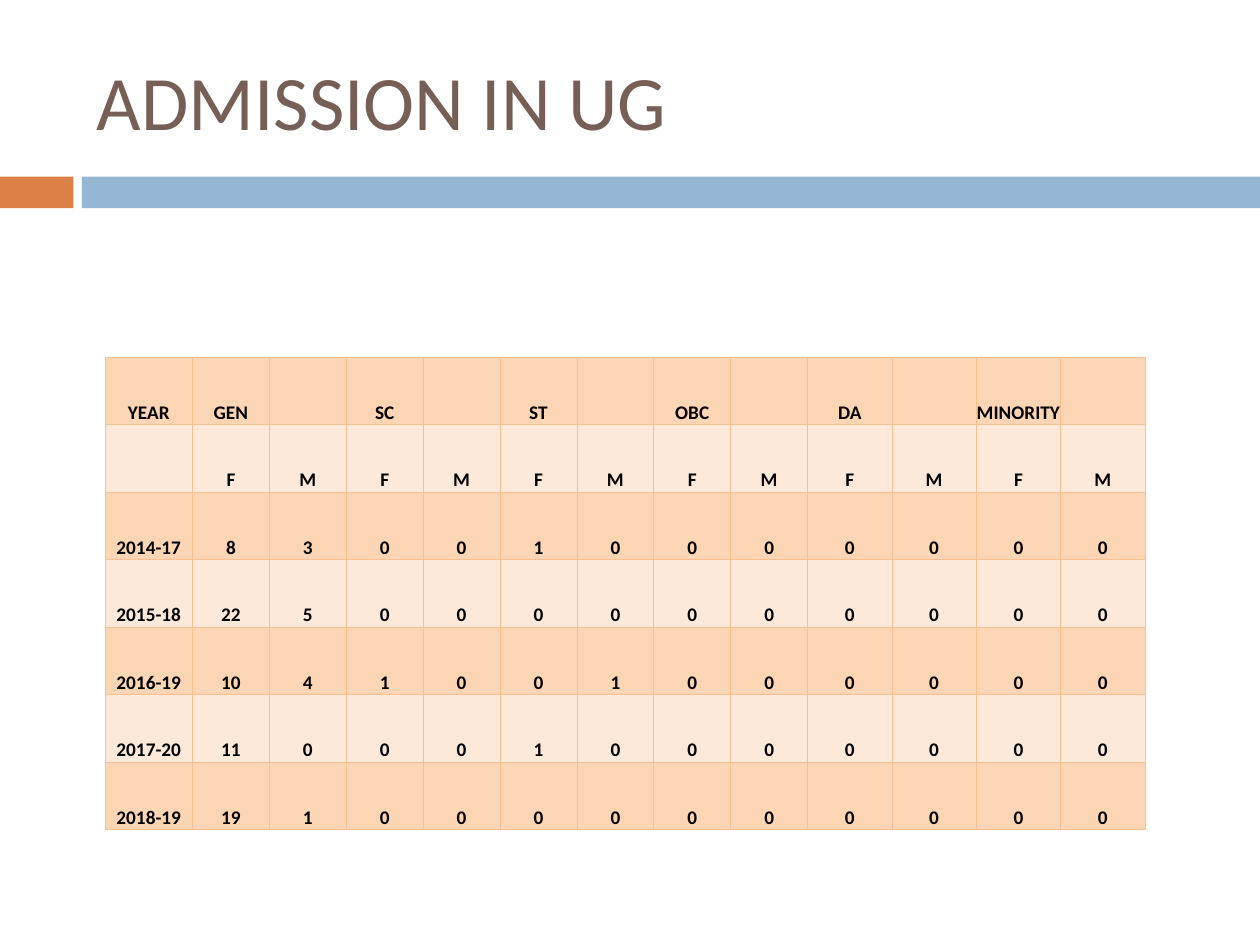
from lxml.etree import SubElement
from pptx import Presentation
from pptx.dml.color import RGBColor
from pptx.enum.shapes import MSO_SHAPE
from pptx.enum.text import MSO_ANCHOR, PP_ALIGN
from pptx.oxml.ns import qn
from pptx.util import Cm, Pt

ORANGE = RGBColor(0xDD, 0x80, 0x47)
BLUE = RGBColor(0x94, 0xB6, 0xD2)
BROWN = RGBColor(0x77, 0x5F, 0x55)
BLACK = RGBColor(0, 0, 0)
PEACH = RGBColor(0xFC, 0xD5, 0xB4)
CREAM = RGBColor(0xFD, 0xE9, 0xD9)
BORDER = RGBColor(0xFA, 0xC0, 0x90)


def add_run(p, text, size, color, bold=False):
    r = p.add_run()
    r.text = text
    r.font.name = "Calibri"
    r.font.size = Pt(size)
    r.font.bold = bold
    r.font.color.rgb = color


def add_borders(cell):
    tcPr = cell._tc.get_or_add_tcPr()
    for side in ("a:lnL", "a:lnR", "a:lnT", "a:lnB"):
        ln = SubElement(tcPr, qn(side), w=str(Pt(0.5)))
        fill = SubElement(ln, qn("a:solidFill"))
        SubElement(fill, qn("a:srgbClr"), val=str(BORDER))


prs = Presentation()
prs.slide_width = Cm(25.4)
prs.slide_height = Cm(19.05)
s = prs.slides.add_slide(prs.slide_layouts[6])

for left, width, color in ((0, 1.48, ORANGE), (1.65, 23.75, BLUE)):
    sp = s.shapes.add_shape(MSO_SHAPE.RECTANGLE, Cm(left), Cm(3.56), Cm(width), Cm(0.64))
    sp.shadow.inherit = False
    sp.fill.solid()
    sp.fill.fore_color.rgb = color
    sp.line.fill.background()

tb = s.shapes.add_textbox(Cm(1.7), Cm(0.64), Cm(22.66), Cm(2.74))
tf = tb.text_frame
tf.word_wrap = True
tf.vertical_anchor = MSO_ANCHOR.MIDDLE
add_run(tf.paragraphs[0], "ADMISSION IN UG", 44, BROWN)

header = ["YEAR"]
for group in ("GEN", "SC", "ST", "OBC", "DA", "MINORITY"):
    header += [group, ""]
rows = [
    header,
    [""] + ["F", "M"] * 6,
    ["2014-17", 8, 3, 0, 0, 1, 0, 0, 0, 0, 0, 0, 0],
    ["2015-18", 22, 5, 0, 0, 0, 0, 0, 0, 0, 0, 0, 0],
    ["2016-19", 10, 4, 1, 0, 0, 1, 0, 0, 0, 0, 0, 0],
    ["2017-20", 11, 0, 0, 0, 1, 0, 0, 0, 0, 0, 0, 0],
    ["2018-19", 19, 1, 0, 0, 0, 0, 0, 0, 0, 0, 0, 0],
]
widths = [1.76] + [1.55] * 8 + [1.7] * 4

table = s.shapes.add_table(
    len(rows), len(widths), Cm(2.12), Cm(7.2), Cm(sum(widths)), Cm(9.52)
).table
for col, width in zip(table.columns, widths):
    col.width = Cm(width)

for i, row in enumerate(rows):
    table.rows[i].height = Cm(1.36)
    for j, value in enumerate(row):
        cell = table.cell(i, j)
        add_borders(cell)
        cell.fill.solid()
        cell.fill.fore_color.rgb = CREAM if i % 2 else PEACH
        cell.margin_left = cell.margin_right = 0
        cell.margin_top = cell.margin_bottom = 0
        cell.vertical_anchor = MSO_ANCHOR.BOTTOM
        if value != "":
            p = cell.text_frame.paragraphs[0]
            p.alignment = PP_ALIGN.CENTER
            add_run(p, str(value), 11, BLACK, bold=True)

prs.save("out.pptx")
